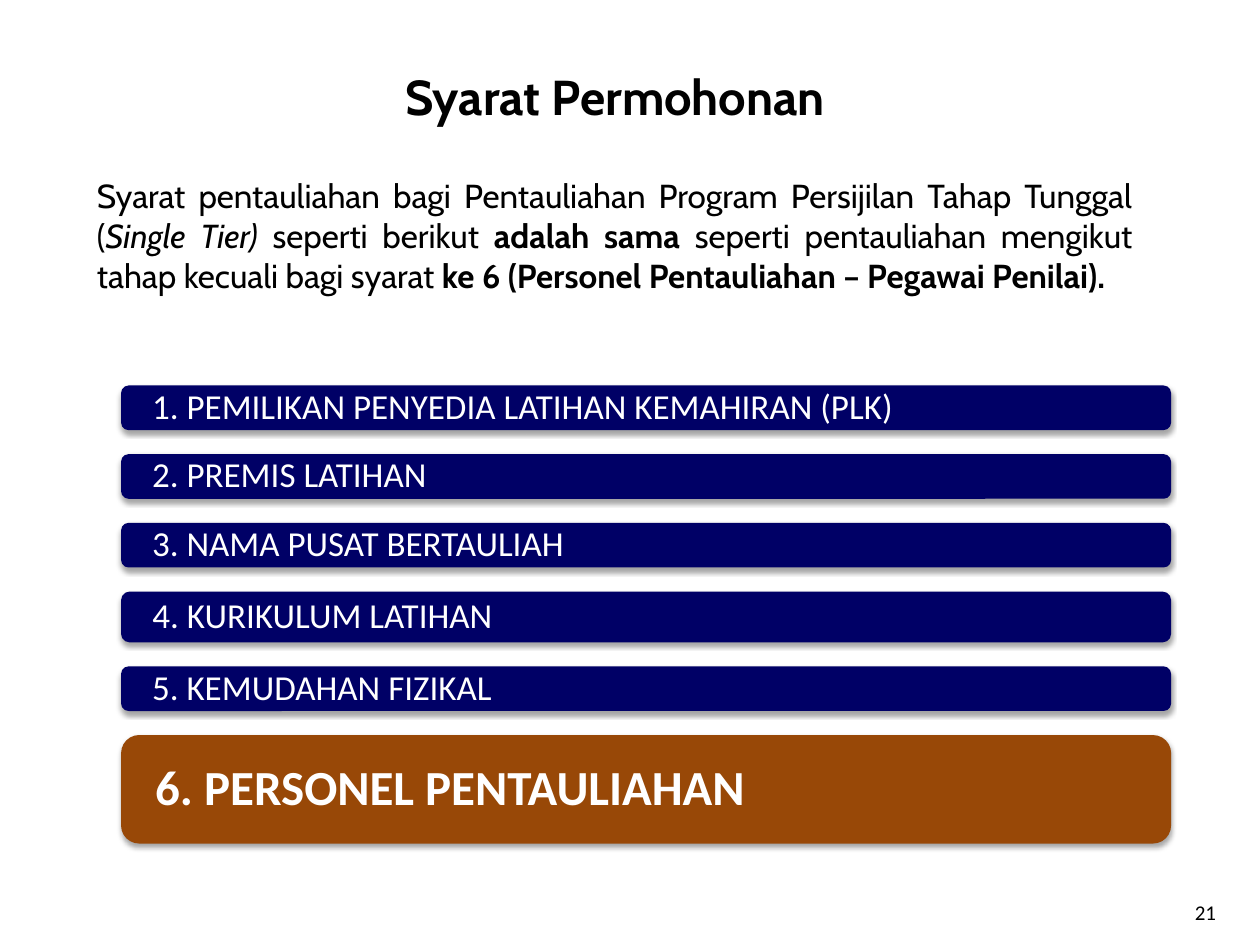
import dataclasses

import lxml.etree
import pptx
import pptx.dml.color
import pptx.enum.shapes
import pptx.enum.text
import pptx.oxml.ns
import pptx.util

Pt = pptx.util.Pt
qn = pptx.oxml.ns.qn
PP_ALIGN = pptx.enum.text.PP_ALIGN
ANCHOR = pptx.enum.text.MSO_ANCHOR

NAVY, BROWN, WHITE, BLACK = "000066", "984807", "FFFFFF", "000000"
BAR_LEFT, BAR_TOP, BAR_WIDTH, BAR_GAP = 69.2, 220.3, 600, 13.75


@dataclasses.dataclass
class Bar:
    text: str
    height: float = 25.5
    fill: str = NAVY
    size: float = 20
    bold: bool = False


@dataclasses.dataclass
class Span:
    text: str
    bold: bool = False
    italic: bool = False


BARS = [
    Bar("1. PEMILIKAN PENYEDIA LATIHAN KEMAHIRAN (PLK)"),
    Bar("2. PREMIS LATIHAN"),
    Bar("3. NAMA PUSAT BERTAULIAH"),
    Bar("4. KURIKULUM LATIHAN", height=29),
    Bar("5. KEMUDAHAN FIZIKAL"),
    Bar("6. PERSONEL PENTAULIAHAN", height=62, fill=BROWN, size=28, bold=True),
]

INTRO = [
    Span("Syarat pentauliahan bagi Pentauliahan Program Persijilan Tahap Tunggal ("),
    Span("Single Tier) ", italic=True),
    Span("seperti berikut "),
    Span("adalah sama ", bold=True),
    Span("seperti pentauliahan mengikut tahap kecuali bagi syarat "),
    Span("ke 6 (Personel Pentauliahan – Pegawai Penilai).", bold=True),
]


def rgb(value: str) -> pptx.dml.color.RGBColor:
    return pptx.dml.color.RGBColor.from_string(value)


def add_run(p, span: Span, font: str, size: float, color: str):
    r = p.add_run()
    r.text = span.text
    r.font.name, r.font.size = font, Pt(size)
    r.font.bold, r.font.italic = span.bold, span.italic
    r.font.color.rgb = rgb(color)
    return r


def make_shadow(alpha: int):
    effects = lxml.etree.Element(qn("a:effectLst"))
    shadow = lxml.etree.SubElement(
        effects, qn("a:outerShdw"), blurRad=str(Pt(3.1)), dist=str(Pt(1.8)),
        dir="5400000", rotWithShape="0")
    color = lxml.etree.SubElement(shadow, qn("a:srgbClr"), val=BLACK)
    lxml.etree.SubElement(color, qn("a:alpha"), val=str(alpha * 1000))
    return effects


def place(sp, left: float, top: float, width: float, height: float) -> None:
    sp.left, sp.top, sp.width, sp.height = map(Pt, (left, top, width, height))


def setup_frame(sp, anchor, wrap: bool = True):
    tf = sp.text_frame
    tf.auto_size = pptx.enum.text.MSO_AUTO_SIZE.NONE
    tf.word_wrap, tf.vertical_anchor = wrap, anchor
    return tf


def add_bar(slide, bar: Bar, top: float) -> None:
    sp = slide.shapes.add_shape(
        pptx.enum.shapes.MSO_SHAPE.ROUNDED_RECTANGLE,
        Pt(BAR_LEFT), Pt(top), Pt(BAR_WIDTH), Pt(bar.height))
    sp.fill.solid()
    sp.fill.fore_color.rgb = rgb(bar.fill)
    sp.line.fill.background()
    sp.shadow.inherit = False
    old = sp._element.spPr.find(qn("a:effectLst"))
    old.getparent().replace(old, make_shadow(35))
    tf = setup_frame(sp, ANCHOR.MIDDLE)
    tf.margin_left = tf.margin_right = Pt(16.5)
    tf.margin_top = tf.margin_bottom = 0
    p = tf.paragraphs[0]
    p.alignment, p.line_spacing = PP_ALIGN.LEFT, 0.9
    add_run(p, Span(bar.text, bar.bold), "Calibri", bar.size, WHITE)


def main() -> None:
    prs = pptx.Presentation()
    prs.slide_width, prs.slide_height = Pt(720), Pt(540)
    slide = prs.slides.add_slide(prs.slide_layouts[1])

    # Title
    title = slide.shapes.title
    place(title, 203.8, 34.6, 295.2, 41)
    p = setup_frame(title, ANCHOR.TOP, wrap=False).paragraphs[0]
    p.alignment = PP_ALIGN.CENTER
    add_run(p, Span("Syarat Permohonan", bold=True), "Cabin", 28, BLACK)

    # Introduction: justified, no bullet, soft text shadow
    body = slide.placeholders[1]
    place(body, 48.2, 96.5, 606.2, 78)
    p = setup_frame(body, ANCHOR.TOP).paragraphs[0]
    p.alignment, p.space_before = PP_ALIGN.JUSTIFY, Pt(0)
    pPr = p._p.get_or_add_pPr()
    pPr.set("marL", "0")
    pPr.set("indent", "0")
    lxml.etree.SubElement(pPr, qn("a:buNone"))
    for span in INTRO:
        r = add_run(p, span, "Cabin", 19, BLACK)
        r.font._element.find(qn("a:solidFill")).addnext(make_shadow(43))

    # Requirement bars
    top = BAR_TOP
    for bar in BARS:
        add_bar(slide, bar, top)
        top += bar.height + BAR_GAP

    # Page number
    number = slide.shapes.add_textbox(Pt(534.2), Pt(502.6), Pt(167.8), Pt(37.4))
    p = setup_frame(number, ANCHOR.MIDDLE).paragraphs[0]
    p.alignment = PP_ALIGN.RIGHT
    add_run(p, Span("21"), "Calibri", 12, BLACK)

    prs.save("out.pptx")


if __name__ == "__main__":
    main()
